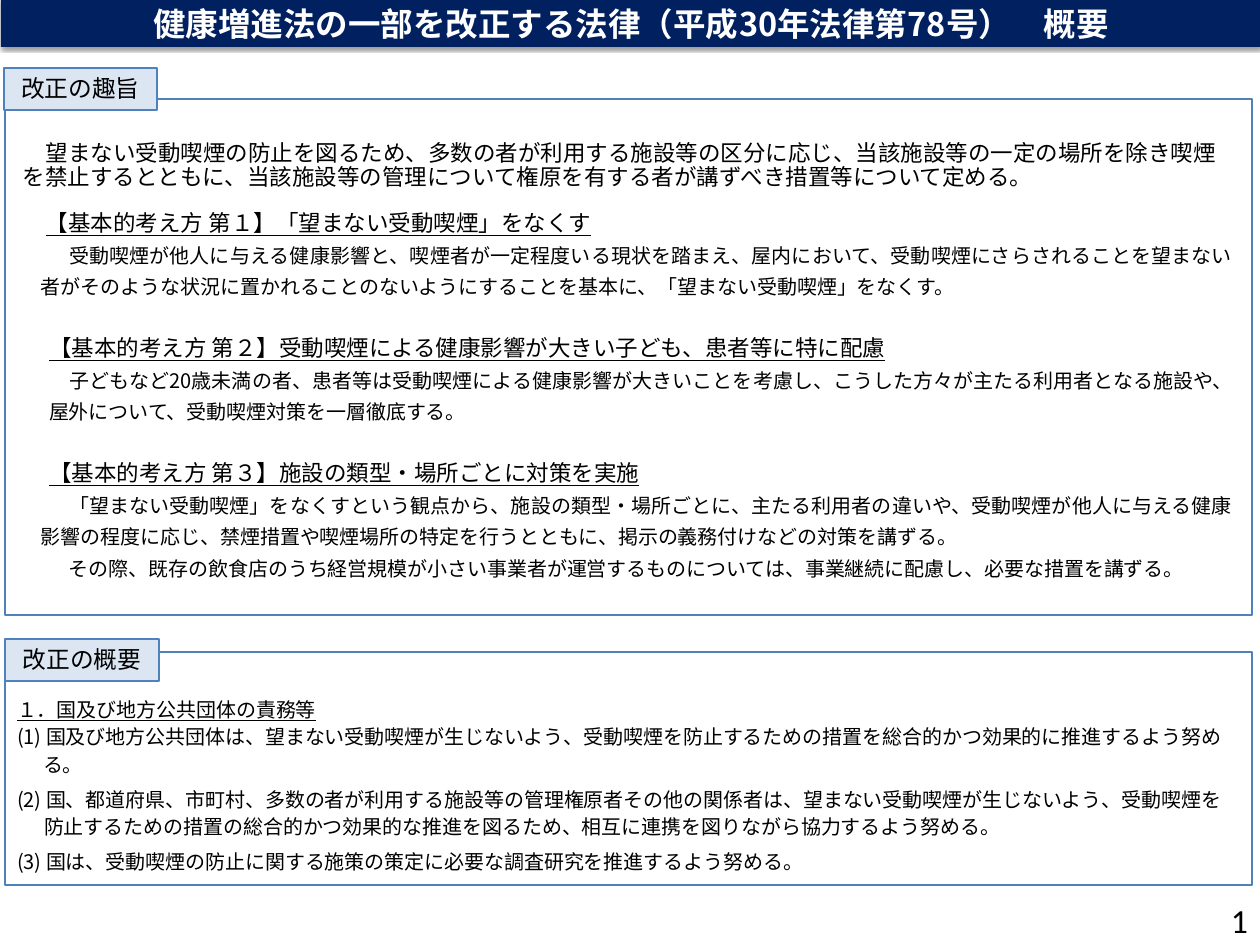
from lxml.etree import SubElement
from pptx import Presentation
from pptx.dml.color import RGBColor
from pptx.enum.shapes import MSO_SHAPE
from pptx.enum.text import MSO_ANCHOR, MSO_AUTO_SIZE, PP_ALIGN
from pptx.oxml.ns import qn
from pptx.util import Emu, Pt

PX = 10160  # EMU per px, 90 px to the inch
BLACK = RGBColor(0, 0, 0)
WHITE = RGBColor(255, 255, 255)
NAVY = RGBColor(0x00, 0x20, 0x60)
BLUE = RGBColor(0x4F, 0x81, 0xBD)
PALE_BLUE = RGBColor(0xDC, 0xE6, 0xF2)
CJK = "Noto Sans CJK JP"
LEFT, CENTER, RIGHT, JUSTIFY = PP_ALIGN.LEFT, PP_ALIGN.CENTER, PP_ALIGN.RIGHT, PP_ALIGN.JUSTIFY


def set_frame(s, box, margins, anchor):
    """Place a shape and set up its text frame; all lengths in px."""
    s.left, s.top, s.width, s.height = [Emu(v * PX) for v in box]
    tf = s.text_frame
    tf.word_wrap = True
    tf.auto_size = MSO_AUTO_SIZE.NONE
    tf.vertical_anchor = anchor
    tf.margin_left, tf.margin_top, tf.margin_right, tf.margin_bottom = [Emu(v * PX) for v in margins]
    return tf


def write(p, text, size, color=BLACK, face=CJK, align=LEFT):
    p.text = text
    p.alignment = align
    p.font.size = Pt(size)
    p.font.color.rgb = color
    p.font.name = face
    SubElement(p.font._element, qn("a:ea"), typeface=face)


prs = Presentation()
prs.slide_width, prs.slide_height = Emu(1260 * PX), Emu(945 * PX)
slide = prs.slides.add_slide(prs.slide_layouts[5])

# Title bar
title = slide.shapes.title
tf = set_frame(title, (1, -1, 1260, 48), (9, 5, 9, 5), MSO_ANCHOR.MIDDLE)
write(tf.paragraphs[0], "健康増進法の一部を改正する法律（平成30年法律第78号）　概要", 26, WHITE, align=CENTER)
tf.paragraphs[0].font.bold = True
title.fill.solid()
title.fill.fore_color.rgb = NAVY
effects = SubElement(title._element.spPr, qn("a:effectLst"))
shadow = SubElement(effects, qn("a:outerShdw"), blurRad=str(Pt(3.1)), dist=str(Pt(1.6)),
                    dir="5400000", rotWithShape="0")
shadow_color = SubElement(shadow, qn("a:srgbClr"), val="000000")
SubElement(shadow_color, qn("a:alpha"), val="38000")

# Paragraphs: text, size, underline, left margin px, first-line px, line pt, space before pt, align, font
PURPOSE = [
    ("望まない受動喫煙の防止を図るため、多数の者が利用する施設等の区分に応じ、当該施設等の一定の場所を除き喫煙を禁止するとともに、当該施設等の管理について権原を有する者が講ずべき措置等について定める。",
     18, False, 0, 23, 18.7, 0, LEFT, CJK),
    ("【基本的考え方 第１】「望まない受動喫煙」をなくす", 18, True, 0, 23, 18.7, 18.7, LEFT, CJK),
    ("　受動喫煙が他人に与える健康影響と、喫煙者が一定程度いる現状を踏まえ、屋内において、受動喫煙にさらされることを望まない者がそのような状況に置かれることのないようにすることを基本に、「望まない受動喫煙」をなくす。",
     16, False, 18, 8, 25, 0, JUSTIFY, CJK),
    ("【基本的考え方 第２】受動喫煙による健康影響が大きい子ども、患者等に特に配慮",
     18, True, 18, 8, 25, 25, JUSTIFY, CJK),
    ("　子どもなど20歳未満の者、患者等は受動喫煙による健康影響が大きいことを考慮し、こうした方々が主たる利用者となる施設や、屋外について、受動喫煙対策を一層徹底する。",
     16, False, 26, 0, 25, 0, JUSTIFY, CJK),
    ("【基本的考え方 第３】施設の類型・場所ごとに対策を実施", 18, True, 26, 0, 25, 25, JUSTIFY, CJK),
    ("　「望まない受動喫煙」をなくすという観点から、施設の類型・場所ごとに、主たる利用者の違いや、受動喫煙が他人に与える健康影響の程度に応じ、禁煙措置や喫煙場所の特定を行うとともに、掲示の義務付けなどの対策を講ずる。",
     16, False, 18, 8, 25, 0, JUSTIFY, "Arial"),
    ("　その際、既存の飲食店のうち経営規模が小さい事業者が運営するものについては、事業継続に配慮し、必要な措置を講ずる。",
     16, False, 18, 8, 25, 0, JUSTIFY, "Calibri"),
]
OUTLINE = [
    ("１．国及び地方公共団体の責務等", 16, True, 45, -45, 22, 0, LEFT, CJK),
    ("(1) 国及び地方公共団体は、望まない受動喫煙が生じないよう、受動喫煙を防止するための措置を総合的かつ効果的に推進するよう努める。",
     16, False, 26, -26, 22, 0, LEFT, CJK),
    ("(2) 国、都道府県、市町村、多数の者が利用する施設等の管理権原者その他の関係者は、望まない受動喫煙が生じないよう、受動喫煙を防止するための措置の総合的かつ効果的な推進を図るため、相互に連携を図りながら協力するよう努める。",
     16, False, 27, -27, 22, 6, LEFT, CJK),
    ("(3) 国は、受動喫煙の防止に関する施策の策定に必要な調査研究を推進するよう努める。",
     16, False, 27, -27, 22, 6, LEFT, CJK),
]
SECTIONS = [
    ("改正の趣旨", (4, 68, 153, 42), (5, 99, 1247, 516), (18, 14, 18, 5), MSO_ANCHOR.MIDDLE, PURPOSE),
    ("改正の概要", (5, 639, 154, 42), (5, 652, 1247, 233), (12, 42, 12, 6), MSO_ANCHOR.TOP, OUTLINE),
]

for heading, label_box, body_box, margins, anchor, paragraphs in SECTIONS:
    body = slide.shapes.add_shape(MSO_SHAPE.RECTANGLE, 0, 0, 0, 0)
    label = slide.shapes.add_shape(MSO_SHAPE.RECTANGLE, 0, 0, 0, 0)
    for s, fill in ((body, WHITE), (label, PALE_BLUE)):
        s.shadow.inherit = False
        s.fill.solid()
        s.fill.fore_color.rgb = fill
        s.line.color.rgb = BLUE
        s.line.width = Pt(2)

    tf = set_frame(label, label_box, (12, 6, 12, 6), MSO_ANCHOR.TOP)
    write(tf.paragraphs[0], heading, 19, align=CENTER)

    tf = set_frame(body, body_box, margins, anchor)
    for i, (text, size, underline, left, first, line, before, align, face) in enumerate(paragraphs):
        p = tf.add_paragraph() if i else tf.paragraphs[0]
        write(p, text, size, face=face, align=align)
        p.font.underline = underline
        p.line_spacing = Pt(line)
        p.space_before = Pt(before)
        pPr = p._p.get_or_add_pPr()
        pPr.set("marL", str(left * PX))
        pPr.set("indent", str(first * PX))

# Page number
number = slide.shapes.add_textbox(0, 0, 0, 0)
tf = set_frame(number, (966, 895, 294, 50), (12, 6, 12, 6), MSO_ANCHOR.MIDDLE)
write(tf.paragraphs[0], "1", 27, face="Calibri", align=RIGHT)

prs.save("out.pptx")
